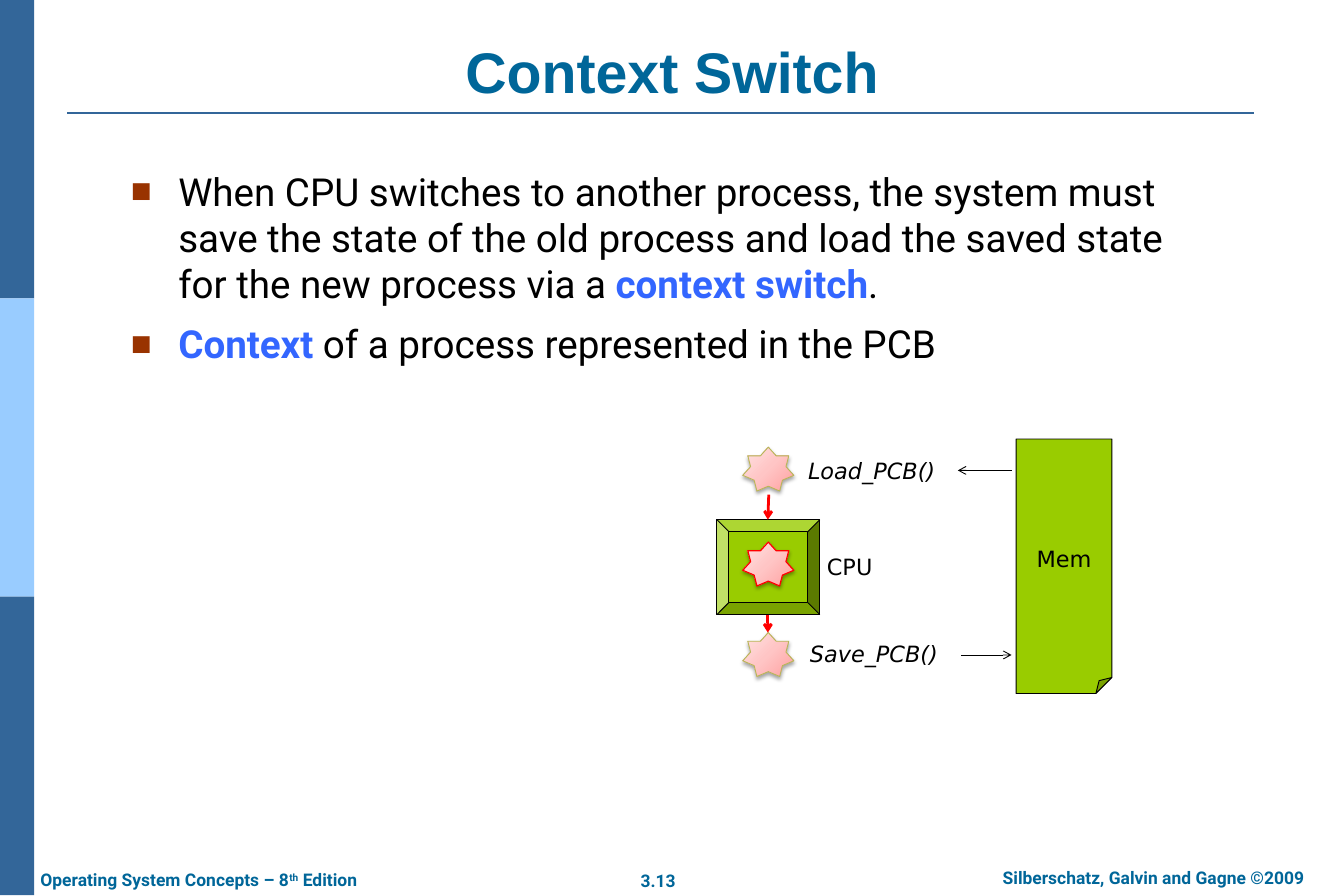
from dataclasses import dataclass
from typing import NamedTuple

from lxml import etree
from pptx import Presentation
from pptx.dml.color import RGBColor
from pptx.enum.shapes import MSO_CONNECTOR, MSO_SHAPE
from pptx.enum.text import MSO_ANCHOR, PP_ALIGN
from pptx.oxml import parse_xml
from pptx.oxml.ns import qn
from pptx.util import Emu, Pt

RECT, BEVEL = MSO_SHAPE.RECTANGLE, MSO_SHAPE.BEVEL
STAR, NOTE = MSO_SHAPE.STAR_7_POINT, MSO_SHAPE.FOLDED_CORNER
LEFT, CENTER = PP_ALIGN.LEFT, PP_ALIGN.CENTER
TOP, MIDDLE, BOTTOM = MSO_ANCHOR.TOP, MSO_ANCHOR.MIDDLE, MSO_ANCHOR.BOTTOM
NS = "http://schemas.openxmlformats.org/drawingml/2006/main"
SCALE = 9144  # 100 px to the inch
WIDE, NARROW = (14, 7), (10, 5)


@dataclass(frozen=True)
class Theme:
    head: str = "Arial"
    body: str = "Roboto"
    label: str = "DejaVu Sans"
    title_size: int = 46
    body_size: int = 31
    label_size: int = 18
    foot_size: int = 14
    navy: str = "336699"
    sky: str = "99CCFF"
    teal: str = "006699"
    blue: str = "3366FF"
    rust: str = "993300"
    green: str = "99CC00"
    olive: str = "B7B758"
    red: str = "FF0000"
    black: str = "000000"
    pinks: tuple[str, ...] = ("FFA0A0", "FFC5C5", "FFE3E3")


T = Theme()


class Box(NamedTuple):
    x: int
    y: int
    w: int
    h: int


class Run(NamedTuple):
    text: str
    font: str
    size: int
    color: str
    bold: bool = False
    italic: bool = False
    base: int = 0


class Label(NamedTuple):
    box: Box
    runs: list[Run]
    align: PP_ALIGN = LEFT
    inset: tuple[int, int] = NARROW
    wrap: bool = False


class Line(NamedTuple):
    start: tuple[int, int]
    end: tuple[int, int]
    color: str
    width: float
    arrow: bool = True


def px(n: int) -> Emu:
    return Emu(n * SCALE)


def rgb(code: str) -> RGBColor:
    return RGBColor.from_string(code)


def add_runs(para, runs: list[Run]) -> None:
    for item in runs:
        run = para.add_run()
        run.text = item.text
        font = run.font
        font.name, font.size = item.font, Pt(item.size)
        font.bold, font.italic = item.bold, item.italic
        font.color.rgb = rgb(item.color)
        if item.base:
            font._element.set("baseline", str(item.base * 1000))


def set_frame(frame, inset: tuple[int, int], anchor: MSO_ANCHOR = TOP, wrap: bool = True) -> None:
    frame.margin_left = frame.margin_right = px(inset[0])
    frame.margin_top = frame.margin_bottom = px(inset[1])
    frame.vertical_anchor, frame.word_wrap = anchor, wrap


def add_label(slide, label: Label) -> None:
    frame = slide.shapes.add_textbox(*map(px, label.box)).text_frame
    set_frame(frame, label.inset, wrap=label.wrap)
    para = frame.paragraphs[0]
    para.alignment = label.align
    add_runs(para, label.runs)


def add_block(slide, kind: MSO_SHAPE, box: Box, fill: str, edge: str = ""):
    shape = slide.shapes.add_shape(kind, *map(px, box))
    shape.shadow.inherit = False
    shape.fill.solid()
    shape.fill.fore_color.rgb = rgb(fill)
    if edge:
        shape.line.color.rgb = rgb(edge)
        shape.line.width = Pt(0.75)
    else:
        shape.line.fill.background()
    return shape


def add_star(slide, top: int, edge: str, width: float) -> None:
    """Draw a process as a shaded star with a soft shadow."""
    shape = add_block(slide, STAR, Box(829, top, 57, 49), T.pinks[0], edge)
    shape.line.width = Pt(width)
    stops = "".join(
        f'<a:gs pos="{i * 50000}"><a:srgbClr val="{c}"/></a:gs>' for i, c in enumerate(T.pinks))
    props = shape._element.spPr
    props.replace(props.find(qn("a:solidFill")), parse_xml(
        f'<a:gradFill xmlns:a="{NS}" rotWithShape="1"><a:gsLst>{stops}</a:gsLst>'
        '<a:lin ang="13500000" scaled="0"/></a:gradFill>'))
    props.find(qn("a:effectLst")).append(parse_xml(
        f'<a:outerShdw xmlns:a="{NS}" blurRad="{Pt(3.1)}" dist="{Pt(1.8)}" dir="5400000"'
        f' rotWithShape="0"><a:srgbClr val="{T.black}"><a:alpha val="35000"/>'
        '</a:srgbClr></a:outerShdw>'))


def add_line(slide, line: Line) -> None:
    link = slide.shapes.add_connector(
        MSO_CONNECTOR.STRAIGHT, *map(px, line.start + line.end))
    link.line.color.rgb = rgb(line.color)
    link.line.width = Pt(line.width)
    if line.arrow:
        etree.SubElement(link.line._get_or_add_ln(), qn("a:tailEnd"), type="arrow")
    etree.SubElement(link._element.spPr, qn("a:effectLst"))


def add_bullets(slide, box: Box, items: list[list[Run]]) -> None:
    frame = slide.shapes.add_textbox(*map(px, box)).text_frame
    set_frame(frame, WIDE)
    for i, runs in enumerate(items):
        para = frame.add_paragraph() if i else frame.paragraphs[0]
        props = para._p.get_or_add_pPr()
        props.set("marL", str(px(53)))
        props.set("indent", str(px(-53)))
        color = etree.SubElement(props, qn("a:buClr"))
        etree.SubElement(color, qn("a:srgbClr"), val=T.rust)
        etree.SubElement(props, qn("a:buSzPct"), val="90000")
        etree.SubElement(props, qn("a:buFont"), typeface=T.head)
        etree.SubElement(props, qn("a:buChar"), char="■")
        if i:
            para.space_before = Pt(11)
        add_runs(para, runs)


def foot(text: str, base: int = 0) -> Run:
    return Run(text, T.body, T.foot_size, T.teal, bold=True, base=base)


def plain(text: str) -> Run:
    return Run(text, T.body, T.body_size, T.black)


def term(text: str) -> Run:
    return Run(text, T.body, T.body_size, T.blue, bold=True)


def tag(text: str, italic: bool = False) -> Run:
    return Run(text, T.label, T.label_size, T.black, italic=italic)


FEET = [
    Label(Box(700, 964, 69, 38), [foot("3.13")], CENTER, WIDE),
    Label(Box(1065, 961, 445, 38), [foot("Silberschatz, Galvin and Gagne ©2009")], CENTER, WIDE, True),
    Label(Box(31, 963, 409, 38),
          [foot("Operating System Concepts – 8"), foot("th", 30), foot(" Edition")], LEFT, WIDE),
]
POINTS = [
    [plain("When CPU switches to another process, the system must save the state of the old "
           "process and load the saved state for the new process via a "),
     term("context switch"), plain(".")],
    [term("Context "), plain("of a process represented in the PCB")],
]
TAGS = [
    Label(Box(892, 505, 177, 40), [tag("Load_PCB()", True)]),
    Label(Box(894, 710, 179, 40), [tag("Save_PCB()", True)]),
    Label(Box(913, 612, 72, 40), [tag("CPU")]),
]
ARROWS = [
    Line((1129, 525), (1069, 525), T.black, 0.75),
    Line((1073, 731), (1129, 731), T.black, 0.75),
    Line((858, 552), (857, 580), T.red, 2.25),
    Line((857, 686), (857, 706), T.red, 2.25),
]


def main() -> None:
    deck = Presentation()
    deck.slide_width, deck.slide_height = px(1500), px(1000)
    slide = deck.slides.add_slide(deck.slide_layouts[5])

    for i, color in enumerate((T.navy, T.sky, T.navy)):
        add_block(slide, RECT, Box(0, i * 1000 // 3, 38, 333), color)
    add_line(slide, Line((75, 126), (1400, 126), T.navy, 1.5, arrow=False))
    for label in FEET:
        add_label(slide, label)

    title = slide.shapes.title
    title.left, title.top, title.width, title.height = map(px, Box(75, 40, 1350, 84))
    set_frame(title.text_frame, WIDE, BOTTOM)
    head = title.text_frame.paragraphs[0]
    head.alignment = CENTER
    add_runs(head, [Run("Context Switch", T.head, T.title_size, T.teal, bold=True)])
    add_bullets(slide, Box(132, 180, 1227, 649), POINTS)

    add_block(slide, BEVEL, Box(800, 580, 115, 106), T.green, T.black)
    for top, edge, width in ((605, T.red, 1), (499, T.olive, 0.75), (706, T.olive, 0.75)):
        add_star(slide, top, edge, width)
    memory = add_block(slide, NOTE, Box(1134, 490, 107, 284), T.green, T.black)
    set_frame(memory.text_frame, NARROW, MIDDLE, wrap=False)
    memory.text_frame.paragraphs[0].alignment = CENTER
    add_runs(memory.text_frame.paragraphs[0], [tag("Mem")])
    for label in TAGS:
        add_label(slide, label)
    for line in ARROWS:
        add_line(slide, line)
    deck.save("out.pptx")


if __name__ == "__main__":
    main()
